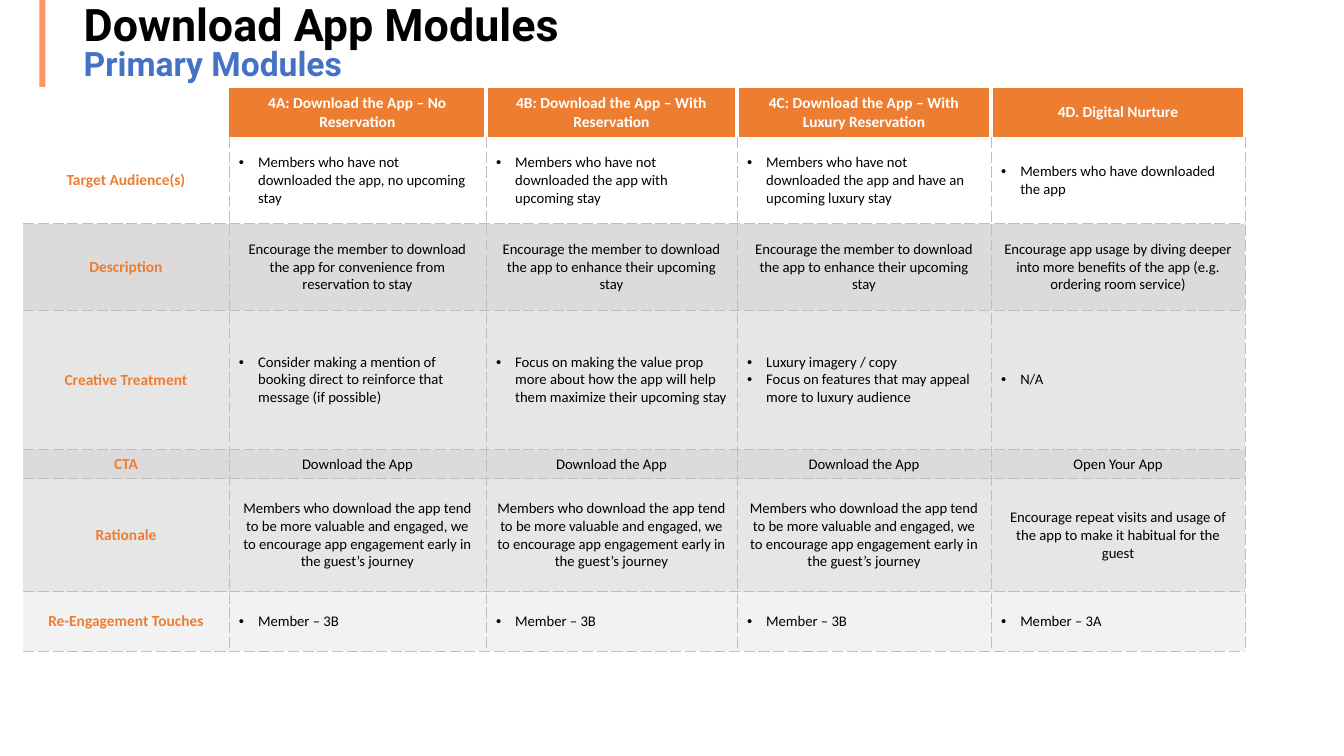
from lxml import etree
from pptx import Presentation
from pptx.dml.color import RGBColor
from pptx.enum.shapes import MSO_SHAPE
from pptx.enum.text import MSO_ANCHOR, MSO_AUTO_SIZE, PP_ALIGN
from pptx.oxml.ns import qn
from pptx.util import Inches, Pt

RECT = MSO_SHAPE.RECTANGLE
MIDDLE, BOTTOM = MSO_ANCHOR.MIDDLE, MSO_ANCHOR.BOTTOM
LEFT, CENTER = PP_ALIGN.LEFT, PP_ALIGN.CENTER
FIXED = MSO_AUTO_SIZE.NONE

BLACK = RGBColor(0x00, 0x00, 0x00)
WHITE = RGBColor(0xFF, 0xFF, 0xFF)
BLUE = RGBColor(0x44, 0x72, 0xC4)
PEACH = RGBColor(0xFF, 0x96, 0x62)
ORANGE = RGBColor(0xED, 0x7D, 0x31)
DARK = RGBColor(0xDC, 0xDA, 0xDA)
MID = RGBColor(0xE7, 0xE6, 0xE6)
PALE = RGBColor(0xF2, 0xF2, 0xF2)
LINE = RGBColor(0xBF, 0xBF, 0xBF)

WIDTHS = [2.04, 2.55, 2.49, 2.52, 2.52]
ENHANCE = "Encourage the member to download the app to enhance their upcoming stay"
VALUE = ("Members who download the app tend to be more valuable and engaged, "
         "we to encourage app engagement early in the guest’s journey")

ROWS = [
    (0.49, ORANGE, False, [
        "",
        "4A: Download the App – No Reservation",
        "4B: Download the App – With Reservation",
        "4C: Download the App – With Luxury Reservation",
        "4D. Digital Nurture"]),
    (0.86, WHITE, True, [
        "Target Audience(s)",
        "Members who have not downloaded the app, no upcoming stay",
        "Members who have not downloaded the app with upcoming stay",
        "Members who have not downloaded the app and have an upcoming luxury stay",
        "Members who have downloaded the app"]),
    (0.86, DARK, False, [
        "Description",
        "Encourage the member to download the app for convenience from reservation to stay",
        ENHANCE,
        ENHANCE,
        "Encourage app usage by diving deeper into more benefits of the app "
        "(e.g. ordering room service)"]),
    (1.38, MID, True, [
        "Creative Treatment",
        "Consider making a mention of booking direct to reinforce that message (if possible)",
        "Focus on making the value prop more about how the app will help them "
        "maximize their upcoming stay",
        "Luxury imagery / copy\nFocus on features that may appeal more to luxury audience",
        "N/A"]),
    (0.29, DARK, False, ["CTA"] + ["Download the App"] * 3 + ["Open Your App"]),
    (1.12, MID, False, [
        "Rationale", VALUE, VALUE, VALUE,
        "Encourage repeat visits and usage of the app to make it habitual for the guest"]),
    (0.59, PALE, True, ["Re-Engagement Touches"] + ["Member – 3B"] * 3 + ["Member – 3A"]),
]


def edge(cell, side, color, width, dash):
    line = etree.SubElement(cell._tc.get_or_add_tcPr(), qn("a:ln" + side))
    if color is None:
        line.set("w", "0")
        etree.SubElement(line, qn("a:noFill"))
        return
    line.set("w", str(Pt(width)))
    fill = etree.SubElement(line, qn("a:solidFill"))
    etree.SubElement(fill, qn("a:srgbClr")).set("val", str(color))
    etree.SubElement(line, qn("a:prstDash")).set("val", dash)


def style(run, face, size, color, bold):
    run.font.name = face
    run.font.size = Pt(size)
    run.font.color.rgb = color
    run.font.bold = bold


deck = Presentation()
deck.slide_width, deck.slide_height = Inches(13.33), Inches(7.5)
slide = deck.slides.add_slide(deck.slide_layouts[5])

bar = slide.shapes.add_shape(RECT, Inches(0.39), 0, Inches(0.06), Inches(1.27))
bar.shadow.inherit = False
bar.fill.solid()
bar.fill.fore_color.rgb = PEACH
bar.line.fill.background()

title = slide.shapes.title
title.left, title.top = Inches(0.73), Inches(0.18)
title.width, title.height = Inches(11.86), Inches(0.69)
frame = title.text_frame
frame.text = "Download App Modules\vPrimary Modules"
frame.auto_size = FIXED
frame.word_wrap = True
frame.vertical_anchor = BOTTOM
head = frame.paragraphs[0]
head.alignment = LEFT
head.line_spacing = 0.8
style(head.runs[0], "Roboto", 32, BLACK, True)
style(head.runs[1], "Roboto", 24, BLUE, True)

grid = slide.shapes.add_table(len(ROWS), len(WIDTHS), Inches(0.23), Inches(0.87),
                              Inches(sum(WIDTHS)), Inches(5.59)).table
grid.first_row = False
grid.horz_banding = False
for col, width in zip(grid.columns, WIDTHS):
    col.width = Inches(width)

for r, (height, shade, listed, texts) in enumerate(ROWS):
    grid.rows[r].height = Inches(height)
    for c, text in enumerate(texts):
        cell = grid.cell(r, c)
        label = r == 0 or c == 0
        for side in "LRTB":
            if r == 0 and side != "B":
                thick = 3 if (side == "R" and c > 0) or (side == "L" and c > 1) else 1
                edge(cell, side, WHITE, thick, "solid")
            elif r == 0 or (c == 0 and side == "L") or (r == 1 and side == "T"):
                edge(cell, side, None, 0, "")
            else:
                edge(cell, side, LINE, 0.5, "sysDash")
        cell.fill.solid()
        cell.fill.fore_color.rgb = WHITE if r == c == 0 else shade
        cell.vertical_anchor = MIDDLE
        cell.text_frame.text = text
        for para in cell.text_frame.paragraphs:
            if listed and not label:
                props = para._p.get_or_add_pPr()
                props.set("marL", str(Inches(0.19)))
                props.set("indent", str(Inches(-0.19)))
                etree.SubElement(props, qn("a:buFont")).set("typeface", "Arial")
                etree.SubElement(props, qn("a:buChar")).set("char", "•")
                para.alignment = LEFT
            else:
                para.alignment = CENTER
            tint = WHITE if r == 0 else ORANGE if label else BLACK
            for run in para.runs:
                style(run, "Calibri", 11 if label else 10.5, tint, label)

deck.save("out.pptx")
